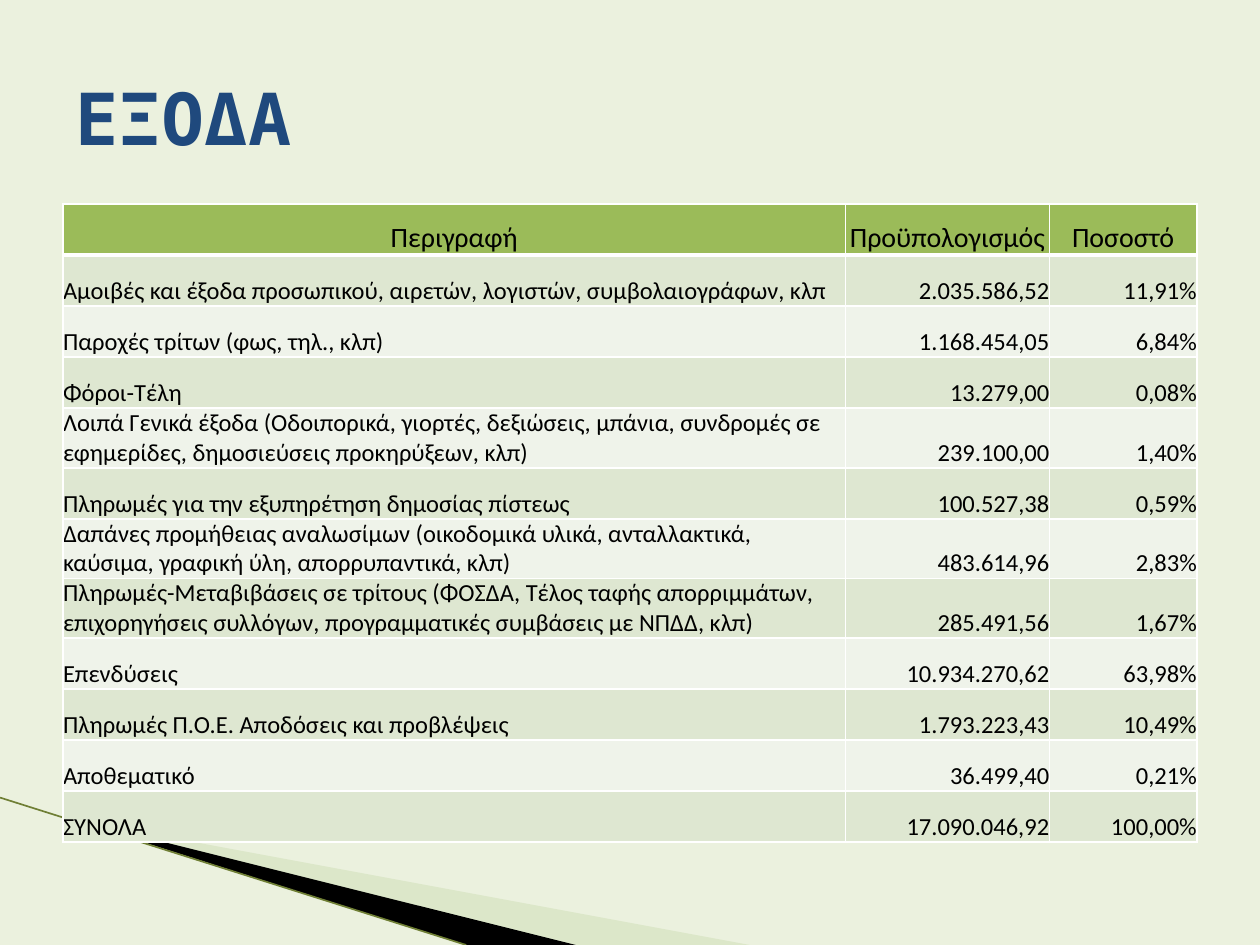
from lxml.etree import SubElement
from pptx import Presentation
from pptx.dml.color import RGBColor
from pptx.enum.shapes import MSO_CONNECTOR
from pptx.enum.text import MSO_ANCHOR, PP_ALIGN
from pptx.oxml.ns import qn
from pptx.util import Emu, Inches, Pt

HEADERS = ("Περιγραφή", "Προϋπολογισμός", "Ποσοστό")
EXPENSES = [
    ("Αμοιβές και έξοδα προσωπικού, αιρετών, λογιστών, συμβολαιογράφων, κλπ", "2.035.586,52", "11,91%"),
    ("Παροχές τρίτων (φως, τηλ., κλπ)", "1.168.454,05", "6,84%"),
    ("Φόροι-Τέλη", "13.279,00", "0,08%"),
    ("Λοιπά Γενικά έξοδα (Οδοιπορικά, γιορτές, δεξιώσεις, μπάνια, συνδρομές σε "
     "εφημερίδες, δημοσιεύσεις προκηρύξεων, κλπ)", "239.100,00", "1,40%"),
    ("Πληρωμές για την εξυπηρέτηση δημοσίας πίστεως", "100.527,38", "0,59%"),
    ("Δαπάνες προμήθειας αναλωσίμων (οικοδομικά υλικά, ανταλλακτικά, "
     "καύσιμα, γραφική ύλη, απορρυπαντικά, κλπ)", "483.614,96", "2,83%"),
    ("Πληρωμές-Μεταβιβάσεις σε τρίτους (ΦΟΣΔΑ, Τέλος ταφής απορριμμάτων, "
     "επιχορηγήσεις συλλόγων, προγραμματικές συμβάσεις με ΝΠΔΔ, κλπ)", "285.491,56", "1,67%"),
    ("Επενδύσεις", "10.934.270,62", "63,98%"),
    ("Πληρωμές Π.Ο.Ε. Αποδόσεις και προβλέψεις", "1.793.223,43", "10,49%"),
    ("Αποθεματικό", "36.499,40", "0,21%"),
    ("ΣΥΝΟΛΑ", "17.090.046,92", "100,00%"),
]
COLUMN_SHARES = (0.69, 0.18, 0.13)
COLUMN_ALIGNS = (PP_ALIGN.LEFT, PP_ALIGN.RIGHT, PP_ALIGN.RIGHT)

CREAM = RGBColor(0xEB, 0xF1, 0xDE)
PALE_GREEN = RGBColor(0xC6, 0xD9, 0xAA)
OLIVE = RGBColor(0x6F, 0x7F, 0x35)
HEADER_GREEN = RGBColor(0x9B, 0xBB, 0x59)
BANDS = (RGBColor(0xDE, 0xE7, 0xD1), RGBColor(0xEF, 0xF3, 0xEA))
NAVY = RGBColor(0x1F, 0x49, 0x7D)
BLACK = RGBColor(0, 0, 0)

SWOOSHES = [
    ([(0.55, 6.5), (5.95, 7.5), (4.56, 7.5)], PALE_GREEN, 40),
    ([(0.53, 6.49), (4.57, 7.5), (3.7, 7.5)], BLACK, 100),
]

deck = Presentation()
deck.slide_width, deck.slide_height = Inches(10), Inches(7.5)
page = deck.slides.add_slide(deck.slide_layouts[6])
page.background.fill.solid()
page.background.fill.fore_color.rgb = CREAM
margin = Inches(0.5)
content_width = deck.slide_width - 2 * margin


def write(paragraph, words, align, **formats):
    paragraph.alignment = align
    span = paragraph.add_run()
    span.text = words
    span.font.color.rgb = formats.pop("color")
    for name, value in formats.items():
        setattr(span.font, name, value)


def add_border(cell, side, points):
    line = SubElement(cell._tc.get_or_add_tcPr(), qn(f"a:ln{side}"), w=str(Pt(points)))
    SubElement(SubElement(line, qn("a:solidFill")), qn("a:srgbClr"), val="FFFFFF")


def add_swoosh(points, color, opacity):
    corners = [(Inches(x), Inches(y)) for x, y in points]
    builder = page.shapes.build_freeform(*corners[0])
    builder.add_line_segments(corners[1:], close=True)
    shape = builder.convert_to_shape()
    shape.shadow.inherit = False
    shape.line.fill.background()
    shape.fill.solid()
    shape.fill.fore_color.rgb = color
    if opacity < 100:
        tint = shape._element.spPr.find(f".//{qn('a:srgbClr')}")
        SubElement(tint, qn("a:alpha"), val=str(opacity * 1000))


for swoosh in SWOOSHES:
    add_swoosh(*swoosh)

edge = page.shapes.add_connector(
    MSO_CONNECTOR.STRAIGHT, 0, Inches(6.33), Inches(3.7), deck.slide_height)
edge.line.color.rgb = OLIVE
edge.line.width = Pt(0.95)
SubElement(edge._element.spPr, qn("a:effectLst"))

rows = [HEADERS, *EXPENSES]
row_height = Inches(0.405)
table = page.shapes.add_table(
    len(rows), len(HEADERS), margin, Inches(1.62),
    content_width, row_height * len(rows)).table
for column, share in zip(table.columns, COLUMN_SHARES):
    column.width = Emu(int(content_width * share))

for row_index, values in enumerate(rows):
    table.rows[row_index].height = row_height
    header = row_index == 0
    for column_index, value in enumerate(values):
        cell = table.cell(row_index, column_index)
        for side in ("left", "right", "top", "bottom"):
            setattr(cell, f"margin_{side}", 0)
        cell.vertical_anchor = MSO_ANCHOR.BOTTOM
        for side in "LRTB":
            thick = (row_index, side) in ((0, "B"), (1, "T"))
            add_border(cell, side, 3 if thick else 1)
        cell.fill.solid()
        cell.fill.fore_color.rgb = HEADER_GREEN if header else BANDS[(row_index - 1) % 2]
        write(cell.text_frame.paragraphs[0], value,
              PP_ALIGN.CENTER if header else COLUMN_ALIGNS[column_index],
              size=Pt(16 if header else 14), name="Calibri", bold=False, color=BLACK)

title = page.shapes.add_textbox(margin, Inches(0.3), content_width, Inches(1.25))
title.text_frame.word_wrap = True
title.text_frame.vertical_anchor = MSO_ANCHOR.MIDDLE
write(title.text_frame.paragraphs[0], "ΕΞΟΔΑ", PP_ALIGN.LEFT,
      size=Pt(41), name="DejaVu Sans Mono", bold=True, color=NAVY)

deck.save("out.pptx")
